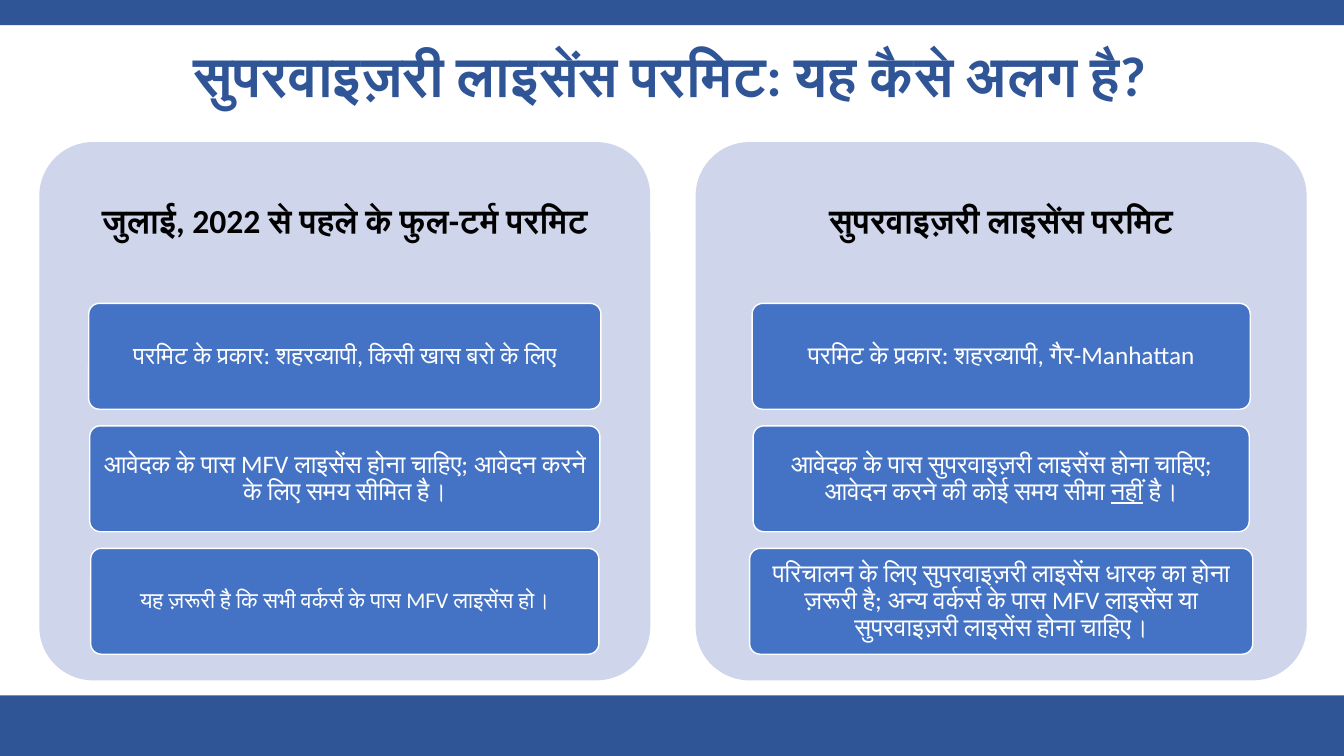
from lxml import etree
from pptx import Presentation
from pptx.dml.color import RGBColor
from pptx.enum import shapes, text
from pptx.oxml.ns import qn
from pptx.util import Inches, Pt

COLORS = {"band": "2F5597", "panel": "CFD5EA", "card": "4472C4",
          "white": "FFFFFF", "black": "000000"}
FONT = "Calibri"
PANEL_TOP, PANEL_W, PANEL_H = 1.41, 6.06, 5.34
HEADING_H = 1.6
CARD_TOP, CARD_H, CARD_STEP = 3.01, 1.05, 1.215

COLUMNS = [
    (0.39, "जुलाई, 2022 से पहले के फुल-टर्म परमिट", [
        (5.08, 17.5, ["परमिट के प्रकार: शहरव्यापी, किसी खास बरो के लिए"]),
        (5.06, 18, ["आवेदक के पास MFV लाइसेंस होना चाहिए; आवेदन करने के लिए समय सीमित है।"]),
        (5.04, 16, ["यह ज़रूरी है कि सभी वर्कर्स के पास MFV लाइसेंस हो।"]),
    ]),
    (6.9, "सुपरवाइज़री लाइसेंस परमिट", [
        (4.94, 18, ["परमिट के प्रकार: शहरव्यापी, गैर-Manhattan"]),
        (4.92, 18, ["आवेदक के पास सुपरवाइज़री लाइसेंस होना चाहिए; आवेदन करने की कोई समय सीमा ",
                    "नहीं", " है।"]),
        (4.99, 18, ["परिचालन के लिए सुपरवाइज़री लाइसेंस धारक का होना ज़रूरी है; अन्य वर्कर्स के "
                    "पास MFV लाइसेंस या सुपरवाइज़री लाइसेंस होना चाहिए।"]),
    ]),
]


def rgb(name):
    return RGBColor.from_string(COLORS[name])


def add_box(s, kind, at, fill, line=None):
    sp = s.shapes.add_shape(kind, *map(Inches, at))
    sp.shadow.inherit = False
    sp.fill.solid()
    sp.fill.fore_color.rgb = rgb(fill)
    if line:
        sp.line.color.rgb = rgb(line)
        sp.line.width = Pt(1)
    else:
        sp.line.fill.background()
    if kind == shapes.MSO_SHAPE.ROUNDED_RECTANGLE:
        sp.adjustments[0] = 0.1
    return sp


def write_text(sp, runs, size, color, bold=False, inset=(0.1, 0.1)):
    tf = sp.text_frame
    side, edge = map(Inches, inset)
    frame = {"word_wrap": True, "vertical_anchor": text.MSO_ANCHOR.MIDDLE,
             "margin_left": side, "margin_right": side,
             "margin_top": edge, "margin_bottom": edge}
    for name, value in frame.items():
        setattr(tf, name, value)
    p = tf.paragraphs[0]
    p.alignment = text.PP_ALIGN.CENTER
    p.line_spacing = 0.9
    for i, words in enumerate(runs):
        r = p.add_run()
        r.text = words
        look = {"name": FONT, "size": Pt(size), "bold": bold, "underline": i == 1}
        for name, value in look.items():
            setattr(r.font, name, value)
        r.font.color.rgb = rgb(color)
        etree.SubElement(r.font._element, qn("a:cs"), typeface=FONT)


def add_label(s, at, words, size, color):
    sp = s.shapes.add_textbox(*map(Inches, at))
    write_text(sp, [words], size, color, bold=True)


def add_column(s, left, heading, cards):
    rounded = shapes.MSO_SHAPE.ROUNDED_RECTANGLE
    add_box(s, rounded, (left, PANEL_TOP, PANEL_W, PANEL_H), "panel")
    add_label(s, (left, PANEL_TOP, PANEL_W, HEADING_H), heading, 24, "black")
    for row, (width, size, runs) in enumerate(cards):
        at = (left + (PANEL_W - width) / 2, CARD_TOP + row * CARD_STEP, width, CARD_H)
        card = add_box(s, rounded, at, "card", "white")
        write_text(card, runs, size, "white", inset=(0.05, 0.04))


def main():
    prs = Presentation()
    prs.slide_width, prs.slide_height = Inches(13.33), Inches(7.5)
    s = prs.slides.add_slide(prs.slide_layouts[6])
    for top, height in ((0, 0.25), (6.9, 0.6)):
        add_box(s, shapes.MSO_SHAPE.RECTANGLE, (0, top, 13.33, height), "band")
    add_label(s, (-0.13, 0.4, 13.54, 0.75),
              "सुपरवाइज़री लाइसेंस परमिट: यह कैसे अलग है?", 40, "band")
    for column in COLUMNS:
        add_column(s, *column)
    prs.save("out.pptx")


if __name__ == "__main__":
    main()
